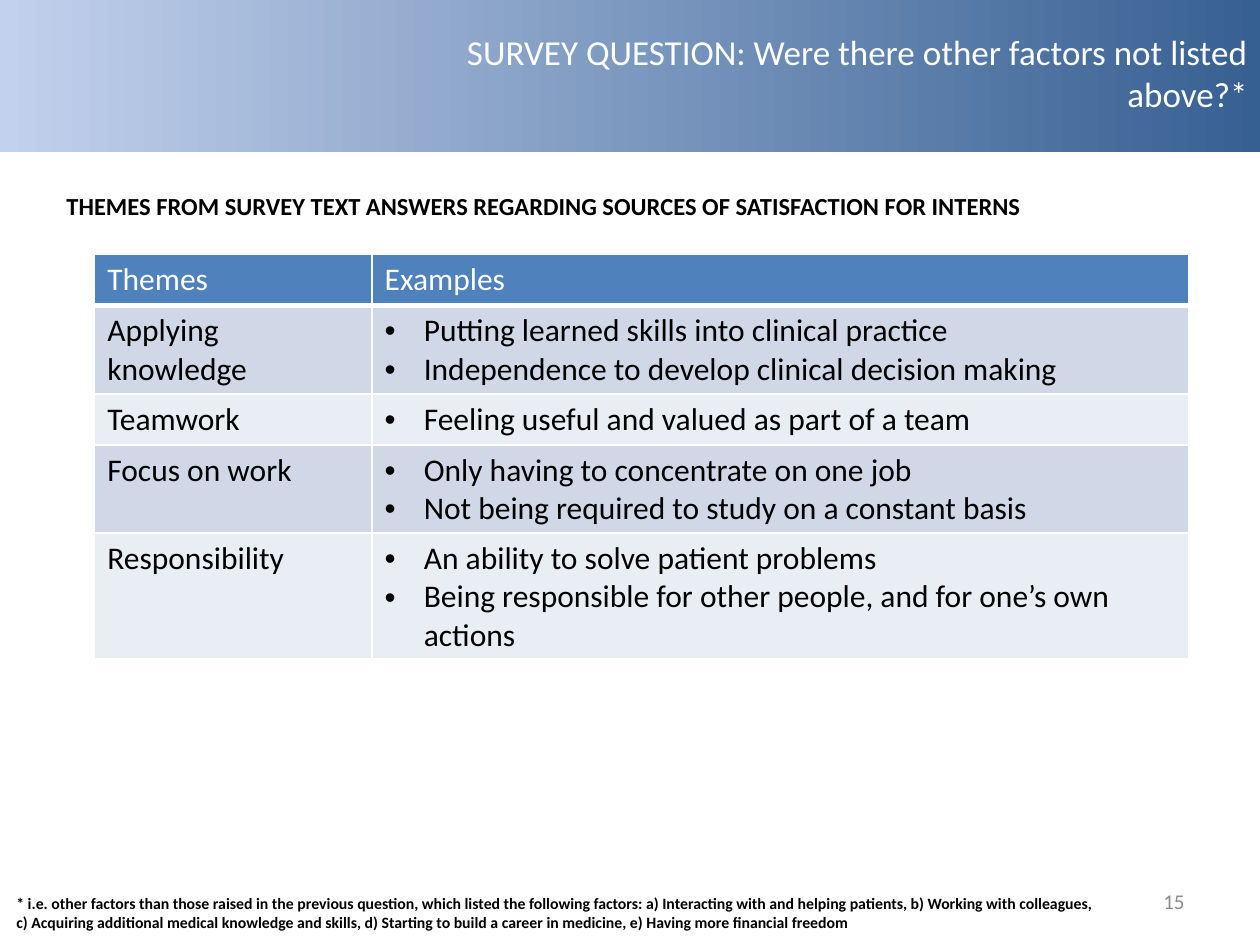
from dataclasses import dataclass

import pptx
import pptx.dml.color
import pptx.enum.shapes
import pptx.enum.text
import pptx.oxml
import pptx.oxml.ns
import pptx.util
from pptx.util import Cm

ALIGN = pptx.enum.text.PP_ALIGN
ANCHOR = pptx.enum.text.MSO_ANCHOR


@dataclass(frozen=True)
class Theme:
    font: str = "Calibri"
    white: str = "FFFFFF"
    black: str = "000000"
    gray: str = "8C8C8C"
    band_dark: str = "376092"
    band_light: str = "C2D1ED"
    header: str = "4F81BD"
    stripes: tuple = ("D0D8E8", "E9EDF4")
    title_size: int = 20
    table_size: int = 18
    heading_size: int = 14
    number_size: int = 12
    note_size: int = 9


THEME = Theme()

TITLE = "SURVEY QUESTION: Were there other factors not listed above?*"
HEADING = "THEMES FROM SURVEY TEXT ANSWERS REGARDING SOURCES OF SATISFACTION FOR INTERNS"
FOOTNOTE = (
    "* i.e. other factors than those raised in the previous question, which listed the "
    "following factors: a) Interacting with and helping patients, b) Working with colleagues, "
    "c) Acquiring additional medical knowledge and skills, d) Starting to build a career in "
    "medicine, e) Having more financial freedom"
)
COLUMNS = ("Themes", "Examples")
THEMES = (
    ("Applying knowledge", ("Putting learned skills into clinical practice",
                            "Independence to develop clinical decision making")),
    ("Teamwork", ("Feeling useful and valued as part of a team",)),
    ("Focus on work", ("Only having to concentrate on one job",
                       "Not being required to study on a constant basis")),
    ("Responsibility", ("An ability to solve patient problems",
                        "Being responsible for other people, and for one’s own actions")),
)


def color(value):
    return pptx.dml.color.RGBColor.from_string(value)


def add_bullet(paragraph):
    properties = paragraph._p.get_or_add_pPr()
    properties.set("marL", str(Cm(0.79)))
    properties.set("indent", str(-Cm(0.79)))
    for xml in ('<a:buFont {} typeface="Arial"/>', '<a:buChar {} char="•"/>'):
        properties.append(pptx.oxml.parse_xml(xml.format(pptx.oxml.ns.nsdecls("a"))))


def write_text(frame, *lines, size, ink=THEME.black, bold=False, align=ALIGN.LEFT, bullets=False):
    for index, line in enumerate(lines):
        paragraph = frame.add_paragraph() if index else frame.paragraphs[0]
        if bullets:
            add_bullet(paragraph)
        paragraph.alignment = align
        run = paragraph.add_run()
        run.text = line
        run.font.name = THEME.font
        run.font.size = pptx.util.Pt(size)
        run.font.bold = bold
        run.font.color.rgb = color(ink)


def add_text(slide, box, text, anchor=ANCHOR.TOP, wrap=True, **text_format):
    frame = slide.shapes.add_textbox(*box).text_frame
    frame.word_wrap = wrap
    frame.vertical_anchor = anchor
    write_text(frame, text, **text_format)


def add_title_band(slide, left, top, width, height):
    band = slide.shapes.add_shape(
        pptx.enum.shapes.MSO_SHAPE.RECTANGLE, left, top, width, height)
    band.shadow.inherit = False
    band.line.fill.background()
    band.fill.gradient()
    band.fill.gradient_angle = 180
    for stop, shade in zip(band.fill.gradient_stops, (THEME.band_dark, THEME.band_light)):
        stop.color.rgb = color(shade)
    indent = Cm(8.1)
    add_text(slide, (left + indent, top, width - indent, height - Cm(0.15)), TITLE,
             anchor=ANCHOR.MIDDLE, size=THEME.title_size, ink=THEME.white, align=ALIGN.RIGHT)


def set_borders(cell, bottom=1):
    """Draw white cell borders; widths are in points."""
    properties = cell._tc.get_or_add_tcPr()
    widths = {"lnL": 1, "lnR": 1, "lnT": 1, "lnB": bottom}
    for position, (side, width) in enumerate(widths.items()):
        properties.insert(position, pptx.oxml.parse_xml(
            f'<a:{side} {pptx.oxml.ns.nsdecls("a")} w="{pptx.util.Pt(width)}"><a:solidFill>'
            f'<a:srgbClr val="{THEME.white}"/></a:solidFill></a:{side}>'))


def fill_cell(cell, *lines, fill, bottom=1, **text_format):
    cell.fill.solid()
    cell.fill.fore_color.rgb = color(fill)
    set_borders(cell, bottom)
    write_text(cell.text_frame, *lines, size=THEME.table_size, **text_format)


def add_themes_table(slide, left, top, width, row_height):
    row_count = len(THEMES) + 1
    table = slide.shapes.add_table(
        row_count, len(COLUMNS), left, top, width, row_height * row_count).table
    table.columns[0].width = Cm(5.59)
    table.columns[1].width = width - Cm(5.59)
    for column, label in enumerate(COLUMNS):
        fill_cell(table.cell(0, column), label, fill=THEME.header, bottom=3, ink=THEME.white)
    for row, (theme, examples) in enumerate(THEMES, start=1):
        stripe = THEME.stripes[(row - 1) % 2]
        fill_cell(table.cell(row, 0), theme, fill=stripe)
        fill_cell(table.cell(row, 1), *examples, fill=stripe, bullets=True)
    for column in range(len(COLUMNS)):
        cell = table.cell(1, column)
        top_line = cell._tc.tcPr.find(pptx.oxml.ns.qn("a:lnT"))
        top_line.set("w", str(pptx.util.Pt(3)))


def add_footer(slide, left, top, width, height):
    add_text(slide, (left, top + Cm(0.25), Cm(22.23), Cm(1.02)), FOOTNOTE,
             size=THEME.note_size, bold=True)
    number_width = Cm(5.92)
    add_text(slide, (left + width - number_width, top, number_width, height - Cm(0.25)), "15",
             anchor=ANCHOR.MIDDLE, size=THEME.number_size, ink=THEME.gray, align=ALIGN.RIGHT)


def main():
    presentation = pptx.Presentation()
    presentation.slide_width = Cm(25.4)
    presentation.slide_height = Cm(19.05)
    slide = presentation.slides.add_slide(presentation.slide_layouts[6])
    add_title_band(slide, 0, 0, presentation.slide_width, Cm(3.07))
    add_footer(slide, Cm(0.08), Cm(17.65), Cm(24.05), Cm(1.27))
    add_text(slide, (Cm(1.09), Cm(3.73), Cm(19.79), Cm(0.86)), HEADING,
             wrap=False, size=THEME.heading_size, bold=True)
    add_themes_table(slide, Cm(1.91), Cm(5.13), Cm(22.05), Cm(1.03))
    presentation.save("out.pptx")


if __name__ == "__main__":
    main()
